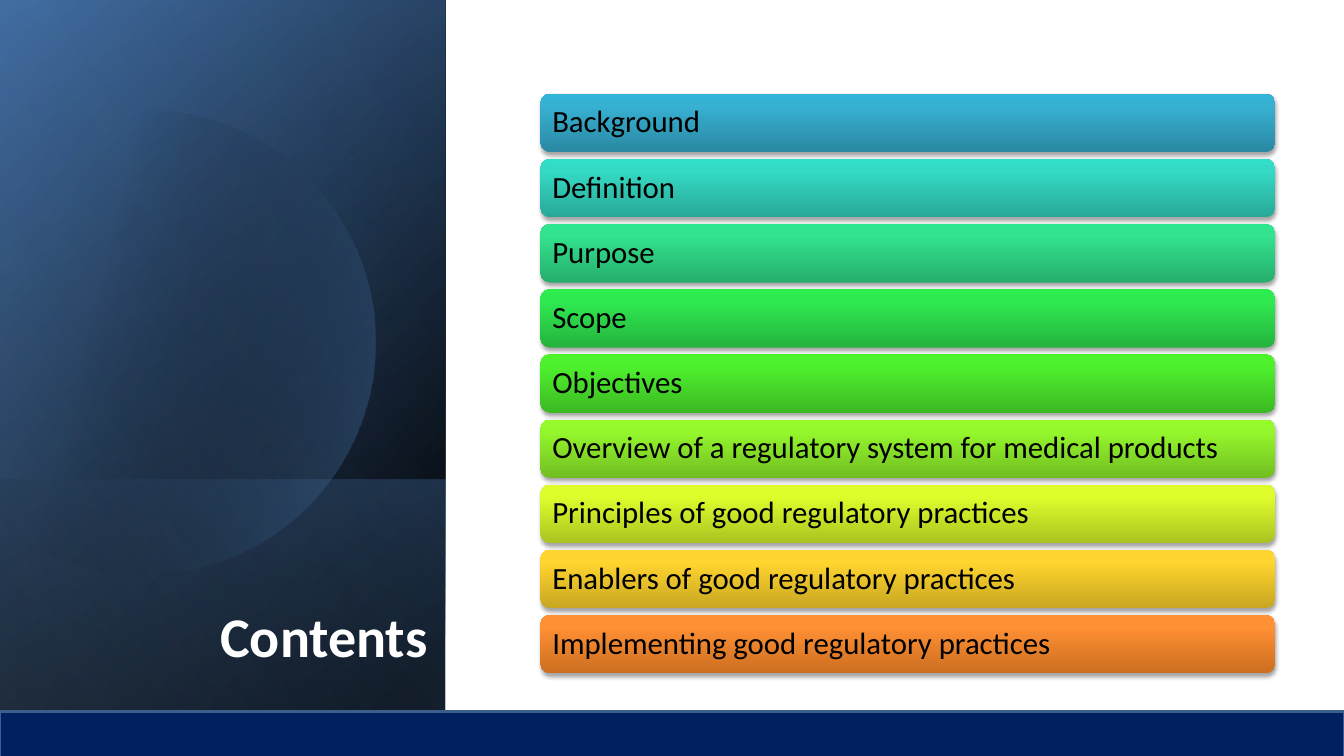
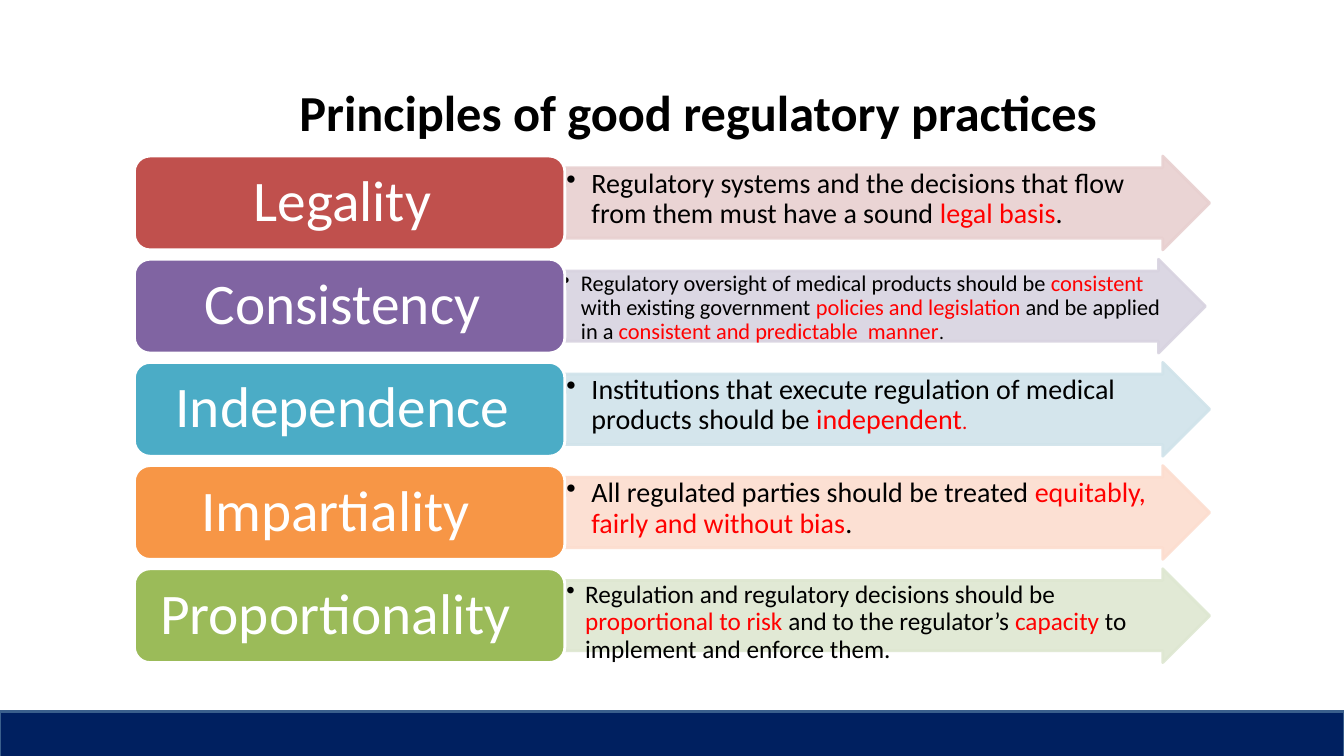
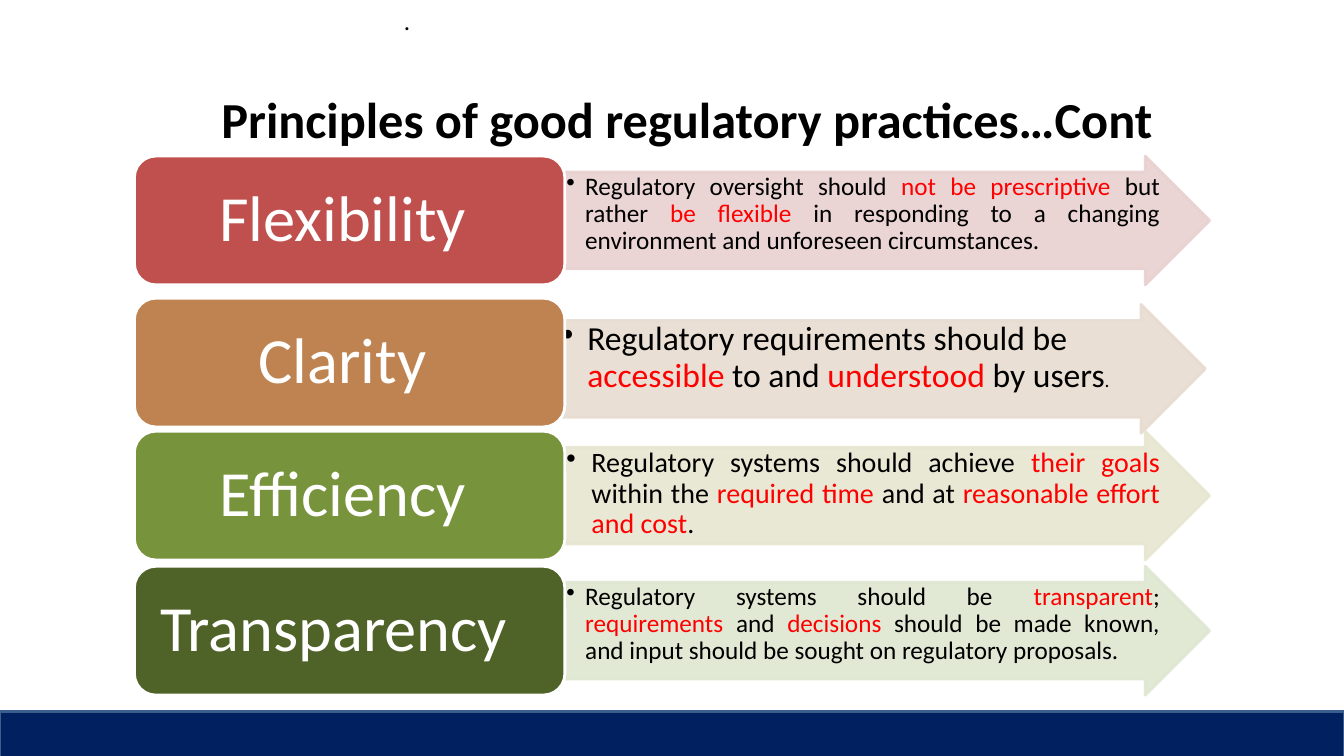
from dataclasses import dataclass
from math import acos, cos, pi, sin

from lxml.etree import SubElement
from pptx import Presentation
from pptx.dml.color import RGBColor
from pptx.enum.shapes import MSO_SHAPE
from pptx.enum.text import MSO_ANCHOR, PP_ALIGN
from pptx.oxml.ns import qn
from pptx.util import Pt

FONT = "Calibri"
SLIDE_WIDTH, SLIDE_HEIGHT = 960, 540
PANEL_WIDTH = 318
LABEL_LEFT, LABEL_WIDTH = 96, 307.5
ARROW_LEFT, ARROW_WIDTH = 403.5, 460.5
FIRST_ROW_TOP = 111.5

BLACK = RGBColor(0x00, 0x00, 0x00)
WHITE = RGBColor(0xFF, 0xFF, 0xFF)
RED = RGBColor(0xFF, 0x00, 0x00)
NAVY = RGBColor(0x00, 0x20, 0x60)
STEEL = RGBColor(0x3A, 0x5F, 0x8C)
DEEP_BLUE = RGBColor(0x37, 0x60, 0x92)
BLUE = RGBColor(0x4F, 0x81, 0xBD)
PALE_BLUE = RGBColor(0x95, 0xB3, 0xD7)
BRICK = RGBColor(0xC0, 0x50, 0x4D)
BRICK_TINT = RGBColor(0xE8, 0xD0, 0xD0)
PURPLE = RGBColor(0x80, 0x64, 0xA2)
PURPLE_TINT = RGBColor(0xD8, 0xD3, 0xE0)
TEAL = RGBColor(0x4B, 0xAC, 0xC6)
TEAL_TINT = RGBColor(0xD0, 0xE3, 0xEA)
ORANGE = RGBColor(0xF7, 0x96, 0x46)
ORANGE_TINT = RGBColor(0xFC, 0xDD, 0xCF)
GREEN = RGBColor(0x9B, 0xBB, 0x59)
GREEN_TINT = RGBColor(0xDE, 0xE7, 0xD1)
BROWN = RGBColor(0xBE, 0x83, 0x51)
BROWN_TINT = RGBColor(0xE8, 0xDC, 0xD0)
OLIVE = RGBColor(0x77, 0x93, 0x3C)
OLIVE_TINT = RGBColor(0xE7, 0xE6, 0xD1)
FOREST = RGBColor(0x4F, 0x62, 0x28)


def bar_colors(*values):
    return [RGBColor.from_string(value) for value in values]


CONTENTS = [
    ("Background", bar_colors("2A88A2", "37B1D2", "34B4D6")),
    ("Definition", bar_colors("28A897", "34DAC4", "31DEC7")),
    ("Purpose", bar_colors("26AE6D", "32E28D", "2EE68E")),
    ("Scope", bar_colors("25B33E", "2FE950", "2CEE4E")),
    ("Objectives", bar_colors("3CB923", "4EF02E", "4CF52A")),
    ("Overview of a regulatory system for medical products",
     bar_colors("72BE22", "94F72C", "95FC29")),
    ("Principles of good regulatory practices",
     bar_colors("ACC321", "DFFD2B", "E1FF2B")),
    ("Enablers of good regulatory practices",
     bar_colors("C8A621", "FFD52F", "FFD530")),
    ("Implementing good regulatory practices",
     bar_colors("CC6E20", "FF9034", "FF9136")),
]


@dataclass
class Principle:
    name: str
    color: RGBColor
    tint: RGBColor
    size: float
    text: str
    indent: float = 18
    last_size: float = 0
    align: PP_ALIGN = PP_ALIGN.LEFT
    label_shift: float = 5
    arrow_shift: float = 0
    arrow_drop: float = 0


PRINCIPLES = [
    Principle("Legality", BRICK, BRICK_TINT, 20,
              "Regulatory systems and the decisions that flow from them must "
              "have a sound |legal basis|."),
    Principle("Consistency", PURPLE, PURPLE_TINT, 16,
              "Regulatory oversight of medical products should be |consistent "
              "|with existing government |policies and legislation| and be "
              "applied in a |consistent and predictable  manner|.",
              indent=13.5, last_size=14, arrow_shift=-3),
    Principle("Independence", TEAL, TEAL_TINT, 20,
              "Institutions that execute regulation of medical products "
              "should be |independent||.", last_size=15),
    Principle("Impartiality", ORANGE, ORANGE_TINT, 20,
              "All regulated parties should be treated |equitably, fairly and "
              "without bias|.", label_shift=10),
    Principle("Proportionality", GREEN, GREEN_TINT, 18,
              "Regulation and regulatory decisions should be |proportional to "
              "risk |and to the regulator’s |capacity |to implement and "
              "enforce them.", indent=13.5, label_shift=10),
]

MORE_PRINCIPLES = [
    Principle("Flexibility", BRICK, BRICK_TINT, 18,
              "Regulatory oversight should |not be prescriptive| but rather "
              "|be flexible |in responding to a changing environment and "
              "unforeseen circumstances.",
              indent=13.5, align=PP_ALIGN.JUSTIFY),
    Principle("Clarity", BROWN, BROWN_TINT, 24,
              "Regulatory requirements should be |accessible |to and "
              "|understood| by users||.",
              last_size=14, arrow_shift=-3, arrow_drop=4.5),
    Principle("Efficiency", OLIVE, OLIVE_TINT, 20,
              "Regulatory systems should achieve |their goals |within the "
              "|required time |and at |reasonable effort and cost|.",
              align=PP_ALIGN.JUSTIFY),
    Principle("Transparency", FOREST, GREEN_TINT, 18,
              "Regulatory systems should be |transparent|; |requirements |and "
              "|decisions| should be made known, and input should be sought "
              "on regulatory proposals.",
              indent=13.5, align=PP_ALIGN.JUSTIFY, label_shift=11.5),
]


def style_paragraph(paragraph, size, color, bold=False, align=PP_ALIGN.LEFT,
                    line_spacing=None):
    paragraph.alignment = align
    paragraph.line_spacing = line_spacing
    paragraph.font.name = FONT
    paragraph.font.size = Pt(size)
    paragraph.font.bold = bold
    paragraph.font.color.rgb = color


def set_frame(shape, margins, anchor):
    frame = shape.text_frame
    frame.word_wrap = True
    frame.vertical_anchor = anchor
    frame.margin_left, frame.margin_top, frame.margin_right, frame.margin_bottom = (
        Pt(margin) for margin in margins)
    return frame.paragraphs[0]


def add_text(slide, frame, text, size, color, anchor=MSO_ANCHOR.TOP, **style):
    box = slide.shapes.add_textbox(*(Pt(length) for length in frame))
    paragraph = set_frame(box, (7.2, 3.6, 7.2, 3.6), anchor)
    paragraph.text = text
    style_paragraph(paragraph, size, color, **style)


def add_preset(slide, preset, left, top, width, height, fill=None, line=None):
    shape = slide.shapes.add_shape(preset, Pt(left), Pt(top), Pt(width), Pt(height))
    shape.shadow.inherit = False
    if fill is not None:
        shape.fill.solid()
        shape.fill.fore_color.rgb = fill
    if line is None:
        shape.line.fill.background()
    else:
        shape.line.color.rgb = line
        shape.line.width = Pt(2)
    return shape


def set_opacity(color_element, percent):
    SubElement(color_element, qn("a:alpha"), val=str(percent * 1000))


def set_gradient(shape, angle, stops):
    shape.fill.gradient()
    shape.fill.gradient_angle = 360 - angle
    stop_list = shape._element.spPr.find(qn("a:gradFill")).find(qn("a:gsLst"))
    stop_list.clear()
    for position, color, opacity in stops:
        stop = SubElement(stop_list, qn("a:gs"), pos=str(position * 1000))
        set_opacity(SubElement(stop, qn("a:srgbClr"), val=str(color)), opacity)


def add_bar_shadow(shape):
    effects = shape._element.spPr.find(qn("a:effectLst"))
    shadow = SubElement(effects, qn("a:outerShdw"), blurRad=str(Pt(3.1)),
                        dist=str(Pt(1.8)), dir="5400000", rotWithShape="0")
    set_opacity(SubElement(shadow, qn("a:srgbClr"), val=str(BLACK)), 35)


def add_panel(slide, top, angle, stops):
    height = SLIDE_HEIGHT - top
    offset = (PANEL_WIDTH - height) / 2
    panel = add_preset(slide, MSO_SHAPE.RECTANGLE, offset, top - offset,
                       height, PANEL_WIDTH)
    panel.rotation = 90
    panel._element.spPr.find(qn("a:xfrm")).set("flipH", "1")
    set_gradient(panel, angle, stops)


def add_cut_circle(slide, center_x, center_y, radius, angle, stops):
    limit = acos(-center_x / radius)
    steps = 90
    turns = [limit * (2 * step / steps - 1) for step in range(steps + 1)]
    points = [(Pt(center_x + radius * cos(turn)), Pt(center_y + radius * sin(turn)))
              for turn in turns]
    builder = slide.shapes.build_freeform(*points[0], scale=1.0)
    builder.add_line_segments(points[1:], close=True)
    circle = builder.convert_to_shape()
    circle.shadow.inherit = False
    circle.line.fill.background()
    set_gradient(circle, angle, stops)


def add_content_bar(slide, top, text, colors):
    bar = add_preset(slide, MSO_SHAPE.ROUNDED_RECTANGLE, 386, top, 525, 41.75)
    set_gradient(bar, 270, zip((0, 80, 100), colors, (100, 100, 100)))
    add_bar_shadow(bar)
    paragraph = set_frame(bar, (6.5,) * 4, MSO_ANCHOR.MIDDLE)
    paragraph.text = text
    style_paragraph(paragraph, 22, BLACK, line_spacing=0.9)


def add_bullet(paragraph, indent):
    properties = paragraph._p.get_or_add_pPr()
    properties.set("marL", str(Pt(indent)))
    properties.set("indent", str(-Pt(indent)))
    SubElement(properties, qn("a:buChar"), char="•")


def add_principle_arrow(slide, principle, top, height):
    arrow = add_preset(slide, MSO_SHAPE.RIGHT_ARROW,
                       ARROW_LEFT + principle.arrow_shift,
                       top + principle.arrow_drop, ARROW_WIDTH, height,
                       principle.tint, principle.tint)
    arrow.adjustments[0] = 0.75
    for color in arrow._element.spPr.iter(qn("a:srgbClr")):
        set_opacity(color, 90)
    paragraph = set_frame(arrow, (1,) * 4, MSO_ANCHOR.TOP)
    add_bullet(paragraph, principle.indent)
    style_paragraph(paragraph, principle.size, BLACK, align=principle.align,
                    line_spacing=0.9)
    for index, part in enumerate(principle.text.split("|")):
        if part:
            run = paragraph.add_run()
            run.text = part
            if index % 2:
                run.font.color.rgb = RED
    if principle.last_size:
        run.font.size = Pt(principle.last_size)


def add_principle_label(slide, principle, top, height, size):
    label = add_preset(slide, MSO_SHAPE.ROUNDED_RECTANGLE, LABEL_LEFT, top,
                       LABEL_WIDTH, height, principle.color, WHITE)
    shift = principle.label_shift
    paragraph = set_frame(label, (13 - shift, 7, 13 + shift, 7), MSO_ANCHOR.MIDDLE)
    paragraph.text = principle.name
    style_paragraph(paragraph, size, WHITE, align=PP_ALIGN.CENTER, line_spacing=0.9)


def add_slide(presentation):
    slide = presentation.slides.add_slide(presentation.slide_layouts[6])
    add_preset(slide, MSO_SHAPE.RECTANGLE, 0, 508, SLIDE_WIDTH, 34, NAVY, STEEL)
    return slide


def add_contents_slide(presentation):
    slide = presentation.slides.add_slide(presentation.slide_layouts[6])
    add_panel(slide, 0, 50, [(8, BLACK, 100), (100, DEEP_BLUE, 100)])
    add_panel(slide, 0, 30, [(0, BLACK, 0), (99, BLUE, 46)])
    add_panel(slide, 342.5, 130, [(2, BLUE, 29), (100, BLACK, 30)])
    add_cut_circle(slide, 102.5, 244.5, 166, 14, [(29, BLACK, 0), (100, BLUE, 43)])
    add_panel(slide, 0, 120, [(0, BLACK, 0), (99, PALE_BLUE, 11)])
    add_text(slide, (67, 292.5, 245.5, 188.5), "Contents", 40, WHITE,
             MSO_ANCHOR.BOTTOM, bold=True, align=PP_ALIGN.RIGHT)
    for index, (text, colors) in enumerate(CONTENTS):
        add_content_bar(slide, 67 + 46.54 * index, text, colors)
    add_preset(slide, MSO_SHAPE.RECTANGLE, 0, 508, SLIDE_WIDTH, 34, NAVY, STEEL)


def add_principles_slide(presentation, title, title_left, title_top, principles,
                         tops, height, label_size):
    slide = add_slide(presentation)
    add_text(slide, (title_left, title_top, 714, 90), title, 36, BLACK,
             MSO_ANCHOR.MIDDLE, bold=True, align=PP_ALIGN.CENTER)
    for principle, top in zip(principles, tops):
        add_principle_arrow(slide, principle, top, height)
        add_principle_label(slide, principle, top, height, label_size)
    return slide


def main():
    presentation = Presentation()
    presentation.slide_width = Pt(SLIDE_WIDTH)
    presentation.slide_height = Pt(SLIDE_HEIGHT)
    add_contents_slide(presentation)
    add_principles_slide(
        presentation, "Principles of good regulatory practices", 142, 34.5,
        PRINCIPLES, [FIRST_ROW_TOP + 73.7 * row for row in range(5)], 67, 41)
    last_slide = add_principles_slide(
        presentation, "Principles of good regulatory practices…Cont", 134, 39.5,
        MORE_PRINCIPLES, (FIRST_ROW_TOP, 213, 308, 404.5), 92, 46)
    add_text(last_slide, (281.5, 0.5, 396.5, 29), ".", 18, BLACK)
    presentation.save("out.pptx")


if __name__ == "__main__":
    main()
